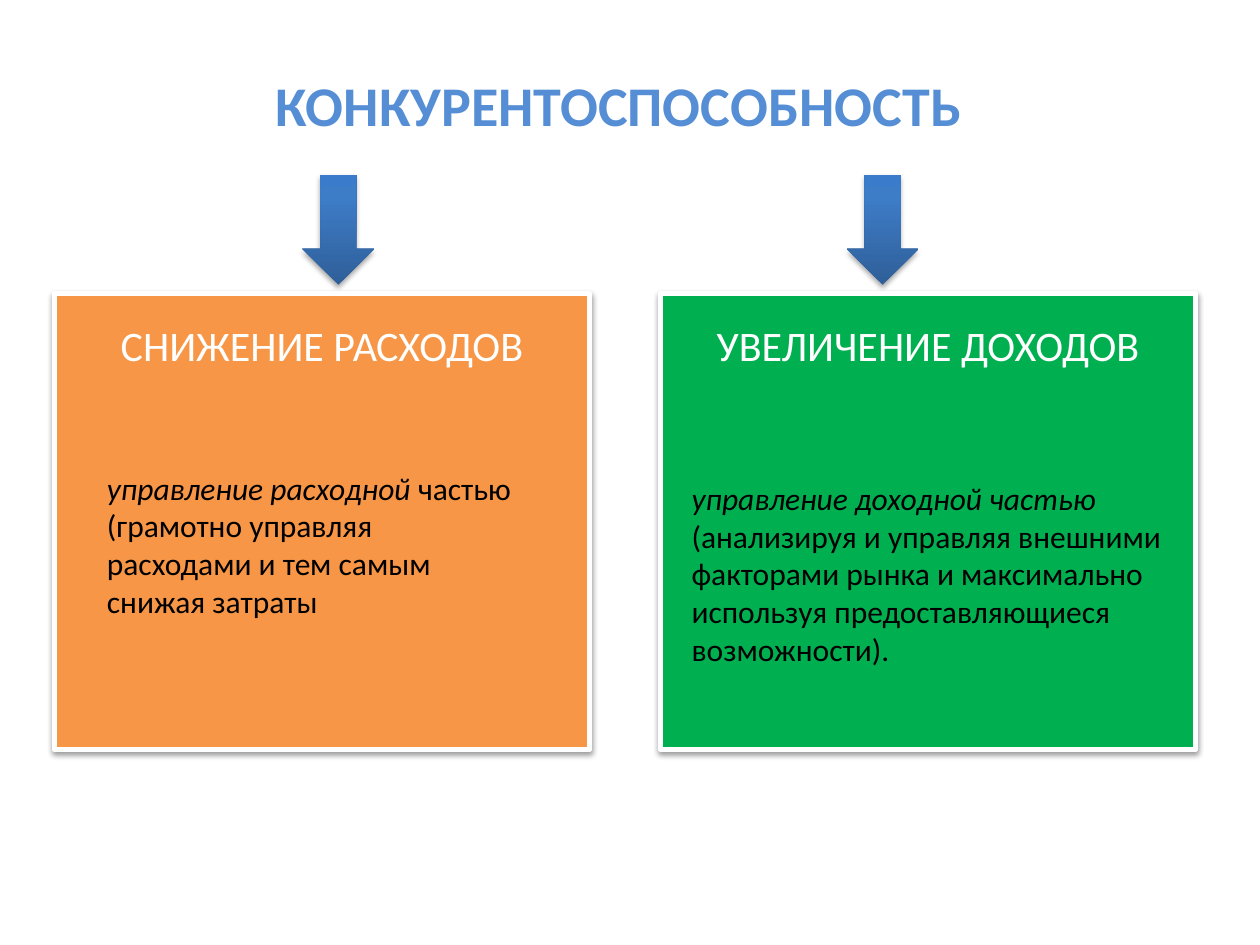
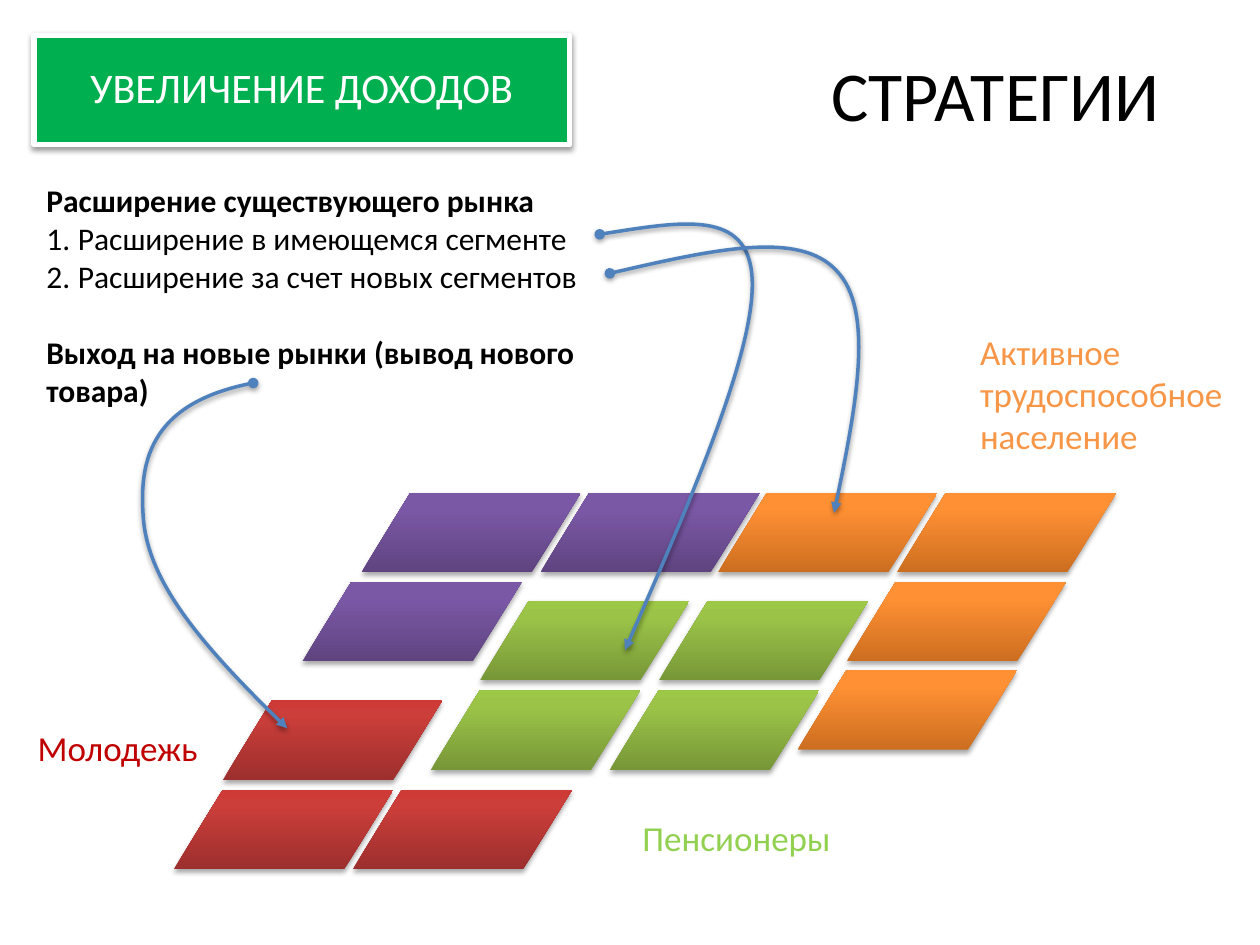
"""Build two slides on competitiveness and income growth strategies."""
from copy import deepcopy
from dataclasses import dataclass

from lxml import etree
from pptx import Presentation
from pptx.dml.color import RGBColor
from pptx.enum.shapes import MSO_SHAPE
from pptx.enum.text import MSO_AUTO_SIZE, PP_ALIGN
from pptx.oxml.ns import qn
from pptx.util import Pt

RECTANGLE = MSO_SHAPE.RECTANGLE
DOWN_ARROW = MSO_SHAPE.DOWN_ARROW
PARALLELOGRAM = MSO_SHAPE.PARALLELOGRAM
CENTER = PP_ALIGN.CENTER
FIT_TEXT = MSO_AUTO_SIZE.SHAPE_TO_FIT_TEXT
PX = 9144


@dataclass(frozen=True)
class Theme:
    """Colours, gradients and type sizes shared by the slides."""

    font: str = "Calibri"
    black: str = "000000"
    white: str = "FFFFFF"
    title_blue: str = "558ED5"
    line_blue: str = "4F81BD"
    cost: str = "F79646"
    income: str = "00B050"
    youth: str = "C00000"
    pensioner: str = "92D050"
    blue_shade: tuple = ("2F5F99", "3D7CC7", "3A7CCB")
    purple_shade: tuple = ("5F4480", "7B58A6", "7C57A8")
    orange_shade: tuple = ("CC6E20", "FF9034", "FF9136")
    green_shade: tuple = ("779737", "9BC348", "9DC746")
    red_shade: tuple = ("9C2F2D", "CB3E3A", "CE3B37")
    body: int = 18
    label: int = 20
    heading: int = 24
    title: int = 32
    big_title: int = 40


THEME = Theme()
CARD_WIDTH = 425
TILE_STEP = 142
TILE_HEIGHT = 63
INCOME_HEADING = "УВЕЛИЧЕНИЕ ДОХОДОВ"


def px(*lengths):
    """Turn px lengths into EMU."""
    return [length * PX for length in lengths]


def rgb(color):
    """Turn a hex string into a colour."""
    return RGBColor.from_string(color)


def add_shadow(shape, opacity, distance):
    """Give a shape a soft shadow that falls straight down."""
    shape.shadow.inherit = False
    effects = shape.element.spPr.find(qn("a:effectLst"))
    shadow = etree.SubElement(
        effects, qn("a:outerShdw"), blurRad=str(Pt(3.1)),
        dist=str(Pt(distance)), dir="5400000", rotWithShape="0")
    tone = etree.SubElement(shadow, qn("a:srgbClr"), val=THEME.black)
    etree.SubElement(tone, qn("a:alpha"), val=str(opacity * 1000))


def add_shaded(slide, kind, box, shades):
    """Add a borderless preset shape with a vertical three-stop gradient."""
    shape = slide.shapes.add_shape(kind, *px(*box))
    shape.fill.gradient()
    shape.fill.gradient_angle = 90
    first_stop = shape.element.spPr.find(".//" + qn("a:gs"))
    first_stop.addnext(deepcopy(first_stop))
    for stop, position, shade in zip(shape.fill.gradient_stops, (0, 0.8, 1), shades):
        stop.position = position
        stop.color.rgb = rgb(shade)
    shape.line.fill.background()
    add_shadow(shape, 35, 1.8)
    return shape


def add_frame(slide, box, wrap=True):
    """Add an empty text box and return its text frame."""
    frame = slide.shapes.add_textbox(*px(*box)).text_frame
    frame.word_wrap = wrap
    frame.auto_size = FIT_TEXT
    return frame


def write(paragraph, text, *, size=THEME.body, color=THEME.black,
          bold=False, italic=False, align=None):
    """Append formatted text to a paragraph."""
    run = paragraph.add_run()
    run.text = text
    run.font.name = THEME.font
    run.font.size = Pt(size)
    run.font.color.rgb = rgb(color)
    run.font.bold = bold
    run.font.italic = italic
    if align is not None:
        paragraph.alignment = align


def add_text(slide, box, text, wrap=True, **style):
    """Add a text box with one paragraph in one format."""
    frame = add_frame(slide, box, wrap)
    write(frame.paragraphs[0], text, **style)
    return frame


def number(paragraph):
    """Make a paragraph an item of a numbered list."""
    properties = paragraph._p.get_or_add_pPr()
    properties.set("marL", str(25 * PX))
    properties.set("indent", str(-25 * PX))
    etree.SubElement(properties, qn("a:buAutoNum"), type="arabicPeriod")


def add_card(slide, left, top, height, color, heading):
    """Add a white-edged coloured card with its heading."""
    card = slide.shapes.add_shape(RECTANGLE, *px(left, top, CARD_WIDTH, height))
    card.fill.solid()
    card.fill.fore_color.rgb = rgb(color)
    card.line.color.rgb = rgb(THEME.white)
    card.line.width = Pt(3)
    add_shadow(card, 38, 1.6)
    add_text(slide, (left, top + 16, CARD_WIDTH, 51), heading,
             size=THEME.heading, color=THEME.white, align=CENTER)


def add_tile_row(slide, shades, left, top, width, count):
    """Add a row of slanted market tiles."""
    for column in range(count):
        box = (left + column * TILE_STEP, top, width, TILE_HEIGHT)
        tile = add_shaded(slide, PARALLELOGRAM, box, shades)
        tile.adjustments[0] = 0.616


def add_curve(slide, start, *points):
    """Add a curved arrow; each three points make one cubic segment."""
    builder = slide.shapes.build_freeform(*start, scale=PX)
    builder.add_line_segments(points, close=False)
    curve = builder.convert_to_shape()
    properties = curve.element.spPr
    segments = list(properties.iter(qn("a:lnTo")))
    outline = segments[0].getparent()
    for first in range(0, len(segments), 3):
        cubic = etree.SubElement(outline, qn("a:cubicBezTo"))
        for segment in segments[first:first + 3]:
            cubic.append(segment[0])
            outline.remove(segment)
    curve.fill.background()
    curve.line.color.rgb = rgb(THEME.line_blue)
    curve.line.width = Pt(2)
    stroke = properties.find(qn("a:ln"))
    etree.SubElement(stroke, qn("a:headEnd"), type="oval")
    etree.SubElement(stroke, qn("a:tailEnd"), type="triangle")
    add_shadow(curve, 38, 1.6)


def build_competitiveness(slide):
    """Show the two ways to competitiveness."""
    add_card(slide, 43, 233, 362, THEME.cost, "СНИЖЕНИЕ РАСХОДОВ")
    add_card(slide, 524, 233, 362, THEME.income, INCOME_HEADING)
    add_text(slide, (209, 51, 580, 64), "КОНКУРЕНТОСПОСОБНОСТЬ", wrap=False,
             size=THEME.title, color=THEME.title_blue, bold=True)

    costs = add_text(slide, (75, 367, 341, 131), "управление расходной ", italic=True)
    write(costs.paragraphs[0],
          "частью (грамотно управляя расходами и тем самым снижая затраты")
    income = add_text(slide, (539, 375, 429, 162), "управление доходной частью",
                      italic=True)
    write(income.add_paragraph(),
          "(анализируя и управляя внешними факторами рынка и максимально "
          "используя предоставляющиеся возможности).")

    for left in (240, 672):
        add_shaded(slide, DOWN_ARROW, (left, 139, 57, 87), THEME.blue_shade)


def build_strategies(slide):
    """Show the income strategies and the market segments they lead to."""
    add_card(slide, 27, 28, 87, THEME.income, INCOME_HEADING)
    add_text(slide, (650, 36, 296, 77), "СТРАТЕГИИ", wrap=False, size=THEME.big_title)

    strategies = add_text(slide, (27, 139, 500, 192),
                          "Расширение существующего рынка", bold=True)
    for item in ("Расширение в имеющемся сегменте",
                 "Расширение за счет новых сегментов"):
        paragraph = strategies.add_paragraph()
        write(paragraph, item)
        number(paragraph)
    new_markets = strategies.add_paragraph()
    new_markets.space_before = Pt(22)
    write(new_markets, "Выход на новые рынки (вывод нового товара)", bold=True)

    for row in (
        (THEME.purple_shade, 287, 391, 174, 2),
        (THEME.orange_shade, 570, 391, 174, 2),
        (THEME.purple_shade, 240, 462, 174, 1),
        (THEME.green_shade, 381, 477, 166, 2),
        (THEME.orange_shade, 672, 462, 174, 1),
        (THEME.red_shade, 177, 556, 174, 1),
        (THEME.green_shade, 342, 548, 166, 2),
        (THEME.orange_shade, 633, 532, 174, 1),
        (THEME.red_shade, 138, 627, 174, 2),
    ):
        add_tile_row(slide, *row)

    add_curve(slide, (476, 186), (540, 176), (594, 166), (597, 221),
              (600, 276), (549, 396), (496, 516))
    add_curve(slide, (484, 217), (566, 198), (635, 183), (664, 215),
              (694, 246), (679, 326), (662, 407))
    add_curve(slide, (201, 304), (117, 320), (110, 369), (114, 414),
              (119, 460), (155, 508), (228, 578))

    for box, segment, color, wrap in (
        ((500, 643, 171, 44), "Пенсионеры", THEME.pensioner, False),
        ((20, 572, 148, 44), "Молодежь", THEME.youth, False),
        ((768, 257, 213, 111), "Активное трудоспособное население",
         THEME.cost, True),
    ):
        add_text(slide, box, segment, wrap, size=THEME.label, color=color)


def main():
    """Build and save the presentation."""
    presentation = Presentation()
    presentation.slide_width, presentation.slide_height = px(1000, 750)
    blank = presentation.slide_layouts[6]
    for build in (build_competitiveness, build_strategies):
        build(presentation.slides.add_slide(blank))
    presentation.save("out.pptx")


if __name__ == "__main__":
    main()
